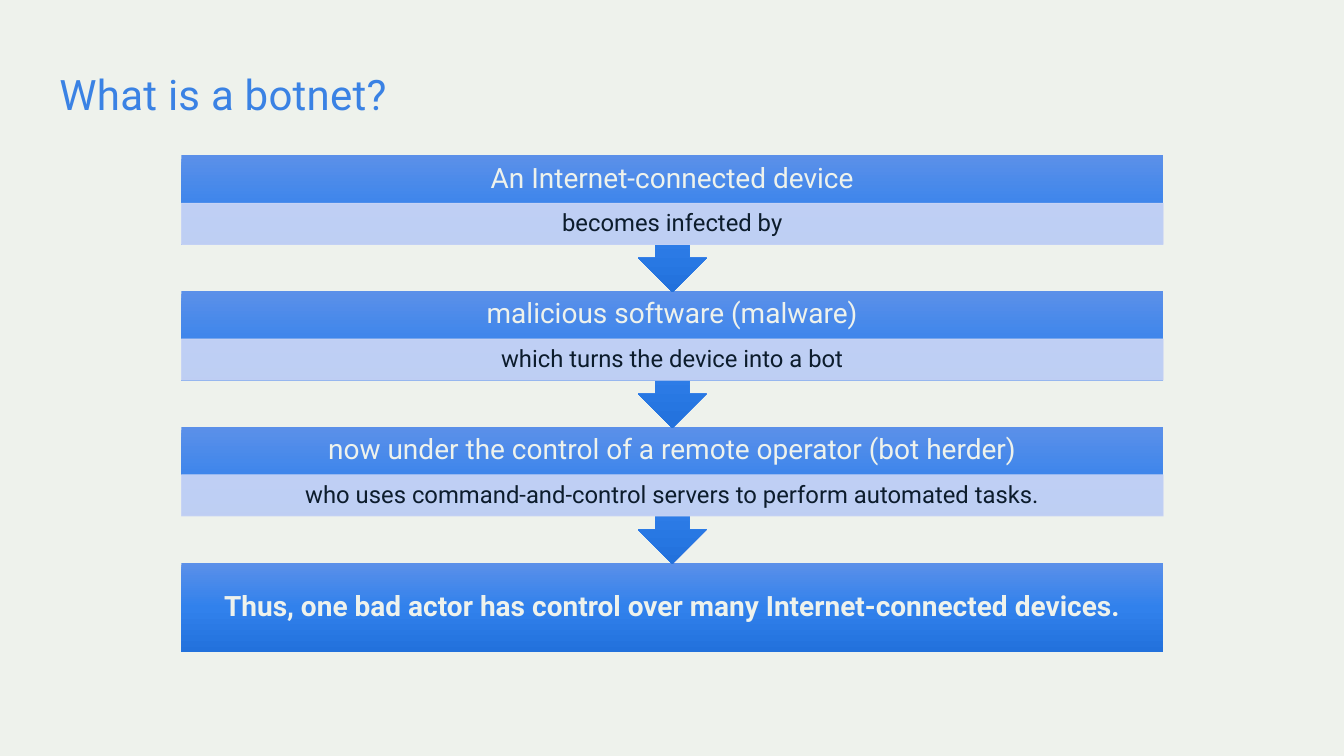
from copy import deepcopy
from dataclasses import dataclass

from lxml import etree
from pptx import Presentation
from pptx import util as u
from pptx.dml import color, fill
from pptx.enum import shapes, text
from pptx.oxml import ns

FONT = "Roboto"
PAPER, TITLE, INK, BAND = "EEF2EC", "3A82E4", "0C1C2C", "CED8F5"
BLUES = [(0, "5B90E9"), (0.5, "3181EC"), (1, "2271DC")]

LEFT, TOP, WIDTH, PITCH = 129.6, 110.9, 701.3, 97
CALLOUT_H, BAND_TOP, BAND_H, RESULT_H = 97.9, 34.2, 29.5, 64


@dataclass
class Step:
    heading: str
    detail: str


STEPS = [
    Step("An Internet-connected device", "becomes infected by"),
    Step("malicious software (malware)", "which turns the device into a bot"),
    Step("now under the control of a remote operator (bot herder)",
         "who uses command-and-control servers to perform automated tasks."),
]
RESULT = "Thus, one bad actor has control over many Internet-connected devices."


def rgb(value: str) -> color.RGBColor:
    return color.RGBColor.from_string(value)


def set_all(target, values: dict) -> None:
    for name, value in values.items():
        setattr(target, name, value)


def write(sp, content: str, size: float, ink: str, bold: bool = False,
          align=text.PP_ALIGN.CENTER, spacing: float = 0.9,
          insets: tuple = (0, 0, 0, 0)):
    tf = sp.text_frame
    sides = ("margin_left", "margin_top", "margin_right", "margin_bottom")
    set_all(tf, {side: u.Pt(v) for side, v in zip(sides, insets)})
    set_all(tf, {"word_wrap": True, "auto_size": text.MSO_AUTO_SIZE.NONE,
                 "vertical_anchor": text.MSO_ANCHOR.MIDDLE})
    p = tf.paragraphs[0]
    set_all(p, {"alignment": align, "line_spacing": spacing,
                "space_before": u.Pt(0)})
    r = p.add_run()
    r.text = content
    set_all(r.font, {"name": FONT, "size": u.Pt(size), "bold": bold})
    r.font.color.rgb = rgb(ink)
    return r


def add_box(s, kind, top: float, height: float):
    sp = s.shapes.add_shape(kind, u.Pt(LEFT), u.Pt(top), u.Pt(WIDTH), u.Pt(height))
    sp.shadow.inherit = False
    return sp


def fill_blue(sp) -> None:
    sp.line.fill.background()
    sp.fill.gradient()
    sp.fill.gradient_angle = 270
    stops = sp._element.spPr.find(".//" + ns.qn("a:gsLst"))
    stops.append(deepcopy(stops[0]))
    for stop, (position, value) in zip(sp.fill.gradient_stops, BLUES):
        stop.position = position
        stop.color.rgb = rgb(value)


def fill_band(sp) -> None:
    sp.line.width = u.Pt(0.5)
    for paint in (sp.fill, sp.line.fill):
        paint.solid()
        paint.fore_color.rgb = rgb(BAND)
    for clr in sp._element.spPr.iter(ns.qn("a:srgbClr")):
        etree.SubElement(clr, ns.qn("a:alpha"), val="90000")


def add_step(s, step: Step, top: float) -> None:
    callout = add_box(s, shapes.MSO_SHAPE.DOWN_ARROW_CALLOUT, top, CALLOUT_H)
    fill_blue(callout)
    write(callout, step.heading, 20, PAPER, insets=(11.5, 0, 11.5, BAND_H))
    band = add_box(s, shapes.MSO_SHAPE.RECTANGLE, top + BAND_TOP, BAND_H)
    fill_band(band)
    write(band, step.detail, 17, INK, insets=(9.4, 1.4, 9.4, 1.4))


def main() -> None:
    prs = Presentation()
    set_all(prs, {"slide_width": u.Pt(960), "slide_height": u.Pt(540)})
    s = prs.slides.add_slide(prs.slide_layouts[5])
    s.background.fill.solid()
    s.background.fill.fore_color.rgb = rgb(PAPER)

    title = s.shapes.title
    set_all(title, {"left": u.Pt(42.5), "top": u.Pt(44.6),
                    "width": u.Pt(875.5), "height": u.Pt(42.5)})
    r = write(title, "What is a botnet?", 30, TITLE,
              align=text.PP_ALIGN.LEFT, spacing=1.06)
    r.font._element.set("spc", "20")

    result = add_box(s, shapes.MSO_SHAPE.RECTANGLE, TOP + len(STEPS) * PITCH, RESULT_H)
    fill_blue(result)
    write(result, RESULT, 20, PAPER, bold=True, insets=(11.5,) * 4)

    for i, step in reversed(list(enumerate(STEPS))):
        add_step(s, step, TOP + i * PITCH)

    prs.save("out.pptx")


if __name__ == "__main__":
    main()
